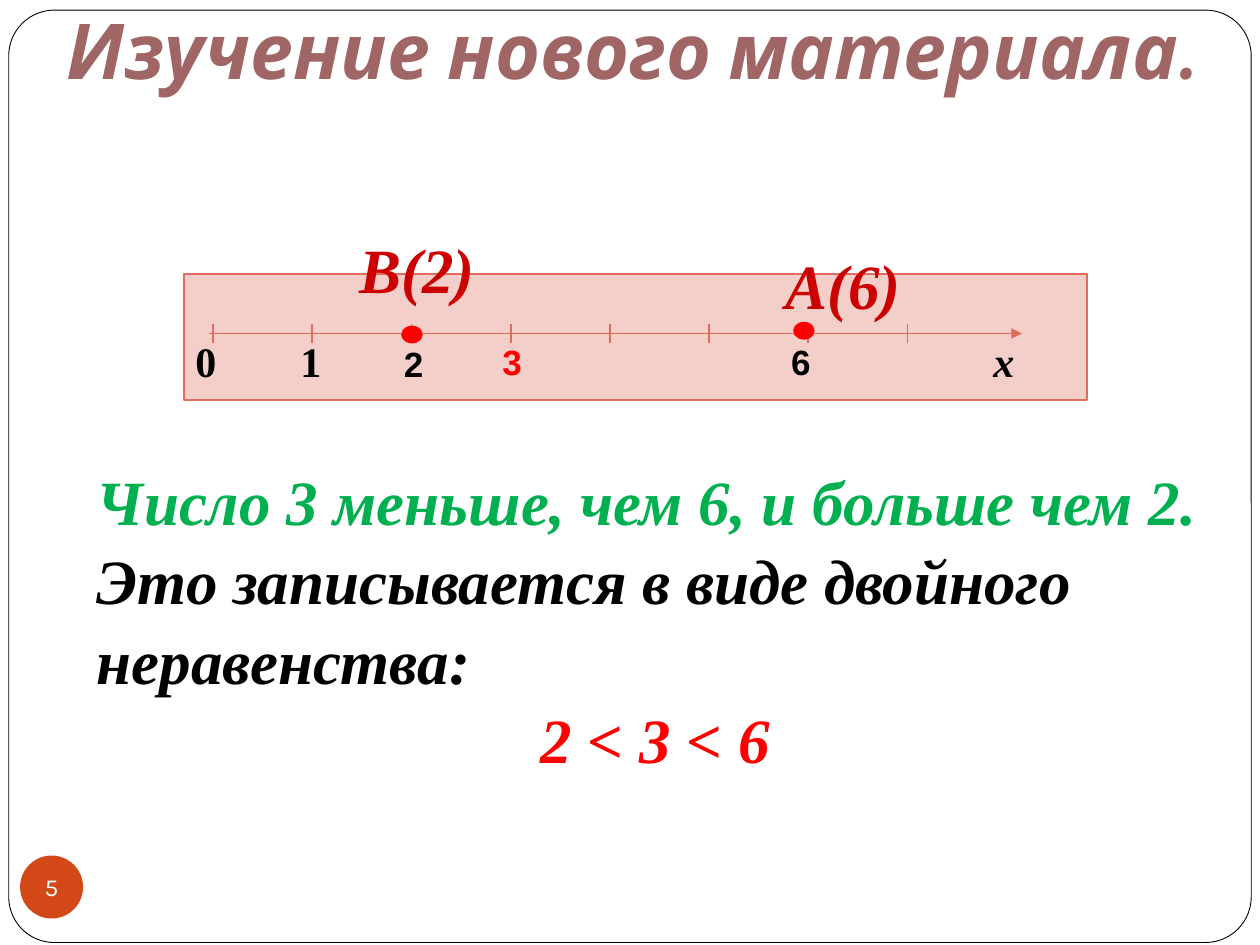
from lxml.etree import SubElement
from pptx import Presentation
from pptx.dml.color import RGBColor
from pptx.enum.shapes import MSO_CONNECTOR, MSO_SHAPE
from pptx.enum.text import MSO_ANCHOR, MSO_AUTO_SIZE, PP_ALIGN
from pptx.oxml.ns import qn
from pptx.util import Pt

BLACK = RGBColor(0, 0, 0)
WHITE = RGBColor(255, 255, 255)
RED = RGBColor(255, 0, 0)
DARK = RGBColor(0xCC, 0, 0)
GREEN = RGBColor(0, 0xB0, 0x50)
ROSE = RGBColor(0xA0, 0x65, 0x65)
PINK = RGBColor(0xF4, 0xCE, 0xC9)
CORAL = RGBColor(0xDF, 0x6C, 0x5D)
RUST = RGBColor(0xD3, 0x48, 0x17)

# Content
TITLE = "Изучение нового материала."
BODY = [
    (PP_ALIGN.LEFT, [("Число 3 меньше, чем 6, и больше чем 2. ", GREEN),
                     ("Это записывается в виде двойного неравенства:", BLACK)]),
    (PP_ALIGN.CENTER, [("2 < 3 < 6", RED)]),
]
PAGE = "5"

# Text formats
HEAD = dict(name="Karla", size=Pt(44), bold=True, italic=True)
PROSE = dict(name="Times New Roman", size=Pt(36), bold=True, italic=True)
SCALE = dict(name="Times New Roman", size=Pt(24), bold=True, italic=False)
AXIS = dict(SCALE, italic=True)
DIGIT = dict(name="Arial", size=Pt(20), bold=True, italic=False)
BADGE = dict(name="Karla", size=Pt(14), bold=False, italic=False)

# Labels: text, centre, top, format, colour
LABELS = [
    ("0", 117.7, 188, SCALE, BLACK),
    ("1", 177.7, 188, SCALE, BLACK),
    ("х", 573.7, 188, AXIS, BLACK),
    ("В(2)", 238.4, 128.2, PROSE, DARK),
    ("А(6)", 481.7, 137.5, PROSE, DARK),
    ("2", 236.3, 192.2, DIGIT, BLACK),
    ("3", 292.6, 190.8, DIGIT, RED),
    ("6", 457.7, 190.8, DIGIT, BLACK),
]
DOTS = [(235.4, 191.2), (459.4, 189)]  # centres of B and A
START, STEP, TICKS = 121.7, 56.7, 8
LEVEL, HALF = 190.6, 5.5


def place(shape, *box):
    for name, value in zip(("left", "top", "width", "height"), box):
        setattr(shape, name, Pt(value))


def write(para, text, form, color):
    run = para.add_run()
    run.text = text
    for name, value in form.items():
        setattr(run.font, name, value)
    run.font.color.rgb = color


def draw(shapes, kind, box, fill, line, width):
    shape = shapes.add_shape(kind, *map(Pt, box))
    shape.shadow.inherit = False
    shape.fill.solid()
    shape.fill.fore_color.rgb = fill
    shape.line.color.rgb = line
    shape.line.width = Pt(width)
    return shape


def rule(shapes, *ends):
    line = shapes.add_connector(MSO_CONNECTOR.STRAIGHT, *map(Pt, ends))
    line.line.color.rgb = CORAL
    line.line.width = Pt(1)
    SubElement(line._element.spPr, qn("a:effectLst"))
    return line


deck = Presentation()
deck.slide_width, deck.slide_height = Pt(720), Pt(540)
slide = deck.slides.add_slide(deck.slide_layouts[1])
shapes = slide.shapes
title, body = slide.placeholders

# Frame behind everything, and page badge
frame = draw(shapes, MSO_SHAPE.ROUNDED_RECTANGLE, (5, 5.8, 710, 532.8),
             WHITE, BLACK, 0.5)
frame.adjustments[0] = 0.049
title._element.addprevious(frame._element)

badge = draw(shapes, MSO_SHAPE.OVAL, (11.5, 488.9, 36, 36), RUST, RUST, 0.5)
badge.line.fill.background()
text = badge.text_frame
text.margin_left = text.margin_right = text.margin_top = text.margin_bottom = 0
text.word_wrap = False
text.vertical_anchor = MSO_ANCHOR.MIDDLE
text.paragraphs[0].alignment = PP_ALIGN.CENTER
write(text.paragraphs[0], PAGE, BADGE, WHITE)

# Title and body
place(title, 0, 0, 720, 94.3)
place(body, 48.2, 258.5, 652.3, 269.3)
for holder in (title, body):
    holder.text_frame.auto_size = MSO_AUTO_SIZE.NONE
    holder.text_frame.vertical_anchor = MSO_ANCHOR.TOP
    holder.text_frame.word_wrap = True
title.text_frame.margin_top = Pt(1.5)
head = title.text_frame.paragraphs[0]
head.alignment = PP_ALIGN.CENTER
write(head, TITLE, HEAD, ROSE)

for i, (align, runs) in enumerate(BODY):
    frame_text = body.text_frame
    para = frame_text.add_paragraph() if i else frame_text.paragraphs[0]
    para.alignment = align
    para.space_before = Pt(0)
    para.line_spacing = 1.05
    props = para._p.get_or_add_pPr()
    props.set("marL", "0")
    props.set("indent", "0")
    SubElement(props, qn("a:buNone"))
    for words, color in runs:
        write(para, words, PROSE, color)

# Number line
group = shapes.add_group_shape().shapes
draw(group, MSO_SHAPE.RECTANGLE, (105.1, 156.5, 516.2, 72), PINK, CORAL, 1)
axis = rule(group, 119.5, LEVEL, 583.9, LEVEL)
SubElement(axis.line._get_or_add_ln(), qn("a:tailEnd"), type="triangle")
for i in range(TICKS):
    x = START + i * STEP
    rule(group, x, LEVEL - HALF, x, LEVEL + HALF)

# Points
for x, y in DOTS:
    draw(shapes, MSO_SHAPE.OVAL, (x - 5.75, y - 4.7, 11.5, 9.4), RED, RED, 0.75)

# Labels
for words, mid, top, form, color in LABELS:
    wide, high = 90, form["size"].pt * 1.2 + 7.2
    box = shapes.add_textbox(*map(Pt, (mid - wide / 2, top, wide, high)))
    box.text_frame.word_wrap = True
    para = box.text_frame.paragraphs[0]
    para.alignment = PP_ALIGN.CENTER
    write(para, words, form, color)

deck.save("out.pptx")
